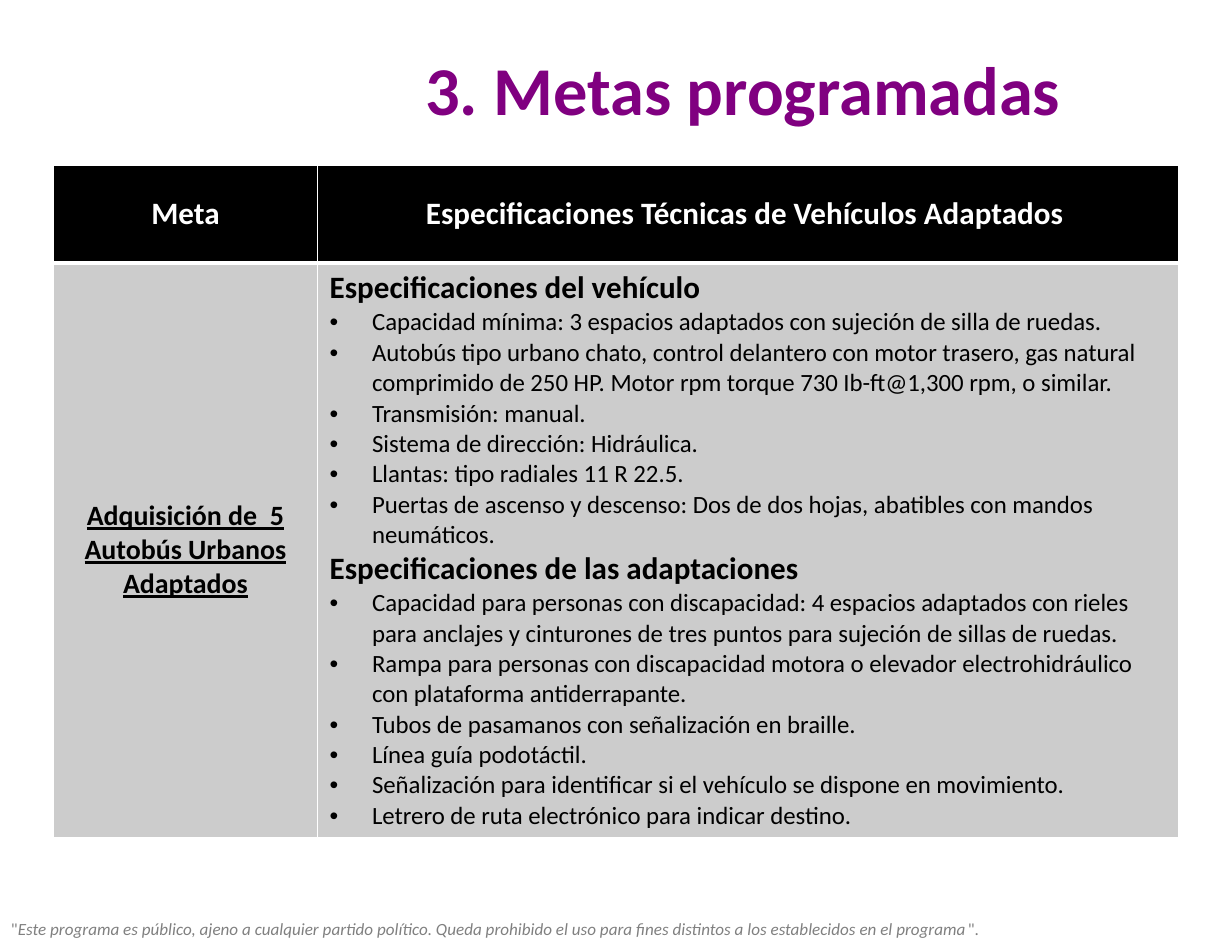
from dataclasses import dataclass

from lxml import etree
from pptx import Presentation
from pptx.dml.color import RGBColor
from pptx.enum.text import MSO_ANCHOR, PP_ALIGN
from pptx.oxml.ns import qn
from pptx.util import Inches, Pt

MID, TOP = MSO_ANCHOR.MIDDLE, MSO_ANCHOR.TOP
LEFT, MIDDLE = PP_ALIGN.LEFT, PP_ALIGN.CENTER

WIDE, HIGH = Pt(793.75), Pt(609.5)
COLS = (2.36, 7.71)
ROWS = (0.87, 4.35)
INDENT = 0.38
PAD_X, PAD_Y = 0.11, 0.06
FONT = "Calibri"
COLOR = {
    "title": "800080",
    "head": "000000",
    "body": "CCCCCC",
    "dark": "000000",
    "light": "FFFFFF",
    "note": "808080",
}


@dataclass
class Line:
    text: str
    size: float
    bold: bool = True
    under: bool = False
    bullet: bool = False


@dataclass
class Box:
    row: int
    col: int
    lines: list[Line]
    fill: str
    ink: str
    align: PP_ALIGN = MIDDLE
    anchor: MSO_ANCHOR = MID


def head(text: str) -> Line:
    return Line(text, 20)


def item(text: str) -> Line:
    return Line(text, 16, bold=False, bullet=True)


SPECS = [
    head("Especificaciones del vehículo"),
    item("Capacidad mínima: 3 espacios adaptados con sujeción de silla de ruedas."),
    item("Autobús tipo urbano chato, control delantero con motor trasero, gas natural "
         "comprimido de 250 HP. Motor rpm torque 730 Ib-ft@1,300 rpm, o similar."),
    item("Transmisión: manual."),
    item("Sistema de dirección: Hidráulica."),
    item("Llantas: tipo radiales 11 R 22.5."),
    item("Puertas de ascenso y descenso: Dos de dos hojas, abatibles con mandos "
         "neumáticos."),
    head("Especificaciones de las adaptaciones"),
    item("Capacidad para personas con discapacidad: 4 espacios adaptados con rieles "
         "para anclajes y cinturones de tres puntos para sujeción de sillas de ruedas."),
    item("Rampa para personas con discapacidad motora o elevador electrohidráulico "
         "con plataforma antiderrapante."),
    item("Tubos de pasamanos con señalización en braille."),
    item("Línea guía podotáctil."),
    item("Señalización para identificar si el vehículo se dispone en movimiento."),
    item("Letrero de ruta electrónico para indicar destino."),
]

BOXES = [
    Box(0, 0, [head("Meta")], "head", "light"),
    Box(0, 1, [head("Especificaciones Técnicas de Vehículos Adaptados ")], "head", "light"),
    Box(1, 0, [Line("Adquisición de  5 Autobús Urbanos Adaptados", 18, under=True)],
        "body", "dark"),
    Box(1, 1, SPECS, "body", "dark", LEFT, TOP),
]

NOTE = [
    ('"', False),
    ("Este programa es público, ajeno a cualquier partido político. Queda prohibido "
     "el uso para fines distintos a los establecidos en el programa", True),
    ('".', False),
]


def set_font(font, size: float, color: str, bold: bool = False) -> None:
    font.name, font.size, font.bold = FONT, Pt(size), bold
    font.color.rgb = RGBColor.from_string(COLOR[color])


def set_pads(area) -> None:
    area.margin_left = area.margin_right = Inches(PAD_X)
    area.margin_top = area.margin_bottom = Inches(PAD_Y)


def add_bullet(para) -> None:
    props = para._p.get_or_add_pPr()
    props.set("marL", str(Inches(INDENT)))
    props.set("indent", str(-Inches(INDENT)))
    etree.SubElement(props, qn("a:buFont")).set("typeface", "Arial")
    etree.SubElement(props, qn("a:buChar")).set("char", "•")


def add_edges(cell, widths: dict[str, float]) -> None:
    """Put white borders before the fill, as the schema orders them."""
    props = cell._tc.get_or_add_tcPr()
    for spot, (side, width) in enumerate(widths.items()):
        edge = etree.Element(qn("a:ln" + side), w=str(Pt(width)))
        fill = etree.SubElement(edge, qn("a:solidFill"))
        etree.SubElement(fill, qn("a:srgbClr")).set("val", COLOR["light"])
        props.insert(spot, edge)


def fill_cell(cell, box: Box) -> None:
    cell.fill.solid()
    cell.fill.fore_color.rgb = RGBColor.from_string(COLOR[box.fill])
    cell.vertical_anchor = box.anchor
    set_pads(cell)
    add_edges(cell, {"L": 1, "R": 1, "T": 3 if box.row else 1, "B": 1 if box.row else 3})
    frame = cell.text_frame
    for spot, line in enumerate(box.lines):
        para = frame.add_paragraph() if spot else frame.paragraphs[0]
        para.text, para.alignment = line.text, box.align
        if line.bullet:
            add_bullet(para)
        set_font(para.font, line.size, box.ink, line.bold)
        para.font.underline = line.under


def add_title(slide) -> None:
    title = slide.shapes.title
    title.left, title.top = Inches(2.83), Inches(0.34)
    title.width, title.height = Inches(7.64), Inches(0.9)
    frame = title.text_frame
    frame.text, frame.vertical_anchor = "3. Metas programadas", MID
    set_pads(frame)
    para = frame.paragraphs[0]
    para.alignment = MIDDLE
    set_font(para.font, 44.1, "title", True)


def add_goals(slide) -> None:
    table = slide.shapes.add_table(
        len(ROWS), len(COLS), Inches(0.48), Inches(1.48),
        Inches(sum(COLS)), Inches(sum(ROWS))).table
    for col, width in zip(table.columns, COLS):
        col.width = Inches(width)
    for row, height in zip(table.rows, ROWS):
        row.height = Inches(height)
    for box in BOXES:
        fill_cell(table.cell(box.row, box.col), box)


def add_note(slide) -> None:
    frame = slide.shapes.add_textbox(
        0, Inches(8.17), WIDE, Inches(0.29)).text_frame
    frame.word_wrap = True
    para = frame.paragraphs[0]
    set_font(para.font, 11, "note")
    for text, slant in NOTE:
        run = para.add_run()
        run.text, run.font.italic = text, slant


def main() -> None:
    deck = Presentation()
    deck.slide_width, deck.slide_height = WIDE, HIGH
    slide = deck.slides.add_slide(deck.slide_layouts[5])
    add_title(slide)
    add_goals(slide)
    add_note(slide)
    deck.save("out.pptx")


if __name__ == "__main__":
    main()
